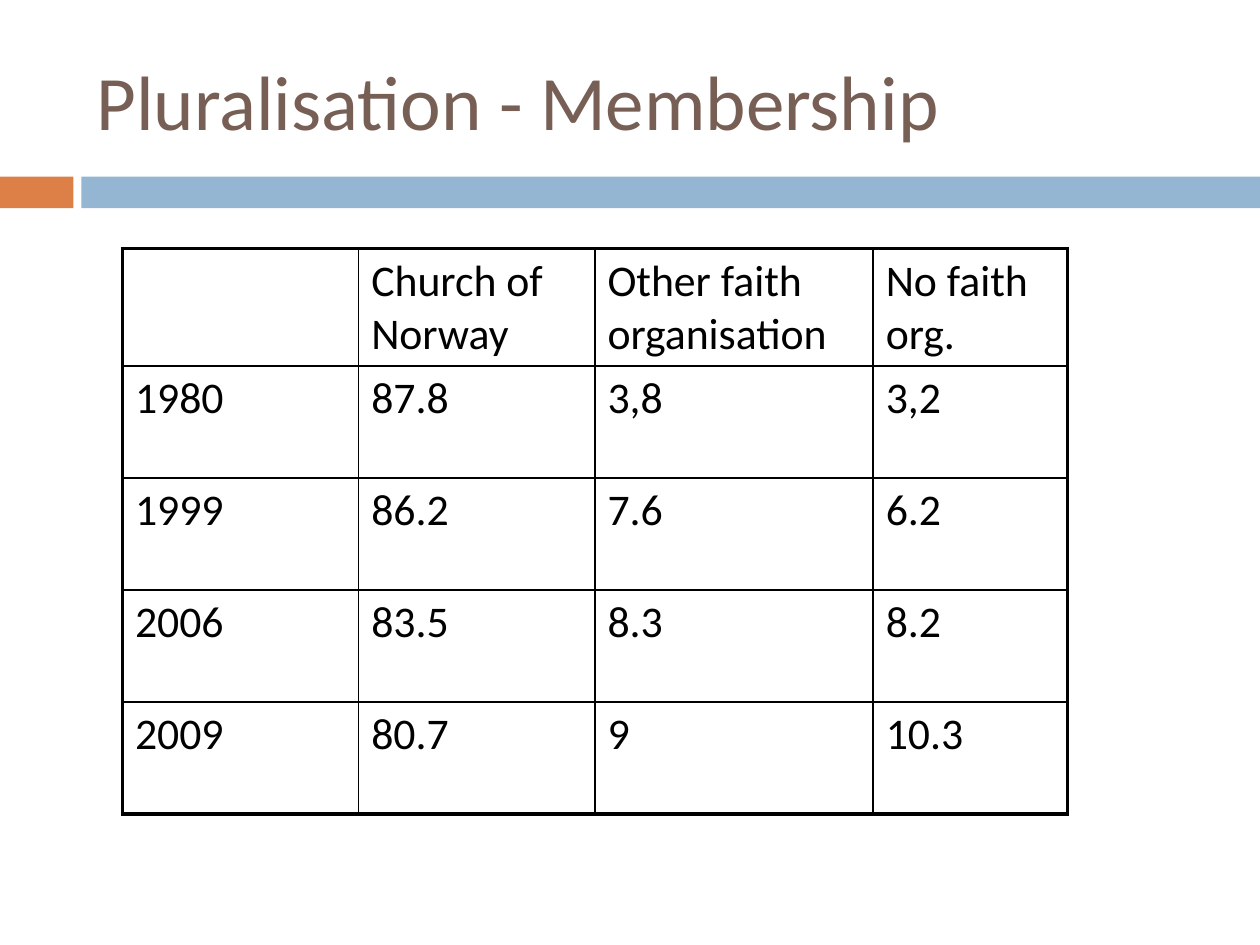
from lxml import etree
from pptx import Presentation
from pptx.dml.color import RGBColor
from pptx.enum import shapes, text
from pptx.oxml.ns import qn
from pptx.util import Pt

FONT = "Calibri"
THIN, THICK = 1, 2.25
COLUMN_WIDTHS = [135, 135, 159, 111]
ROW_HEIGHT = 64
MEMBERSHIP = [
    ["", "Church of Norway", "Other faith organisation", "No faith org."],
    ["1980", "87.8", "3,8", "3,2"],
    ["1999", "86.2", "7.6", "6.2"],
    ["2006", "83.5", "8.3", "8.2"],
    ["2009", "80.7", "9", "10.3"],
]


def color(value):
    return RGBColor.from_string(value)


def style_paragraph(para, size, value):
    para.font.name = FONT
    para.font.size = Pt(size)
    para.font.color.rgb = color(value)


def add_bar(page, left, width, fill):
    bar = page.shapes.add_shape(shapes.MSO_SHAPE.RECTANGLE,
                                Pt(left), Pt(101), Pt(width), Pt(18))
    bar.shadow.inherit = False
    bar.fill.solid()
    bar.fill.fore_color.rgb = color(fill)
    bar.line.fill.background()


def add_title(page, title):
    box = page.shapes.add_textbox(Pt(48), Pt(18), Pt(642), Pt(78))
    frame = box.text_frame
    frame.word_wrap = True
    frame.vertical_anchor = text.MSO_ANCHOR.MIDDLE
    para = frame.paragraphs[0]
    para.text = title
    style_paragraph(para, 44, "775F55")


def set_border(cell, side, width, value="000000"):
    properties = cell._tc.get_or_add_tcPr()
    line = etree.SubElement(properties, qn(f"a:ln{side}"), w=str(int(Pt(width))))
    fill = etree.SubElement(line, qn("a:solidFill"))
    etree.SubElement(fill, qn("a:srgbClr"), val=value)


def add_grid_table(page, left, top, rows):
    last_row, last_column = len(rows) - 1, len(COLUMN_WIDTHS) - 1
    frame = page.shapes.add_table(len(rows), len(COLUMN_WIDTHS), Pt(left), Pt(top),
                                  Pt(sum(COLUMN_WIDTHS)), Pt(ROW_HEIGHT * len(rows)))
    table = frame.table
    table.first_row = table.horz_banding = False
    for column, width in zip(table.columns, COLUMN_WIDTHS):
        column.width = Pt(width)
    for r, values in enumerate(rows):
        table.rows[r].height = Pt(ROW_HEIGHT)
        for c, value in enumerate(values):
            cell = table.cell(r, c)
            # Thick lines only around the outside
            outer_sides = {"L": c == 0, "R": c == last_column,
                           "T": r == 0, "B": r == last_row}
            for side, is_outer in outer_sides.items():
                set_border(cell, side, THICK if is_outer else THIN)
            cell.fill.background()
            para = cell.text_frame.paragraphs[0]
            para.text = value
            style_paragraph(para, 25, "000000")


def main():
    deck = Presentation()
    deck.slide_width, deck.slide_height = Pt(720), Pt(540)
    page = deck.slides.add_slide(deck.slide_layouts[6])

    # Band under the title
    add_bar(page, 0, 42, "DD8047")
    add_bar(page, 46.5, 673.5, "94B6D2")

    # Title and membership figures
    add_title(page, "Pluralisation - Membership")
    add_grid_table(page, 70, 142, MEMBERSHIP)

    deck.save("out.pptx")


if __name__ == "__main__":
    main()
